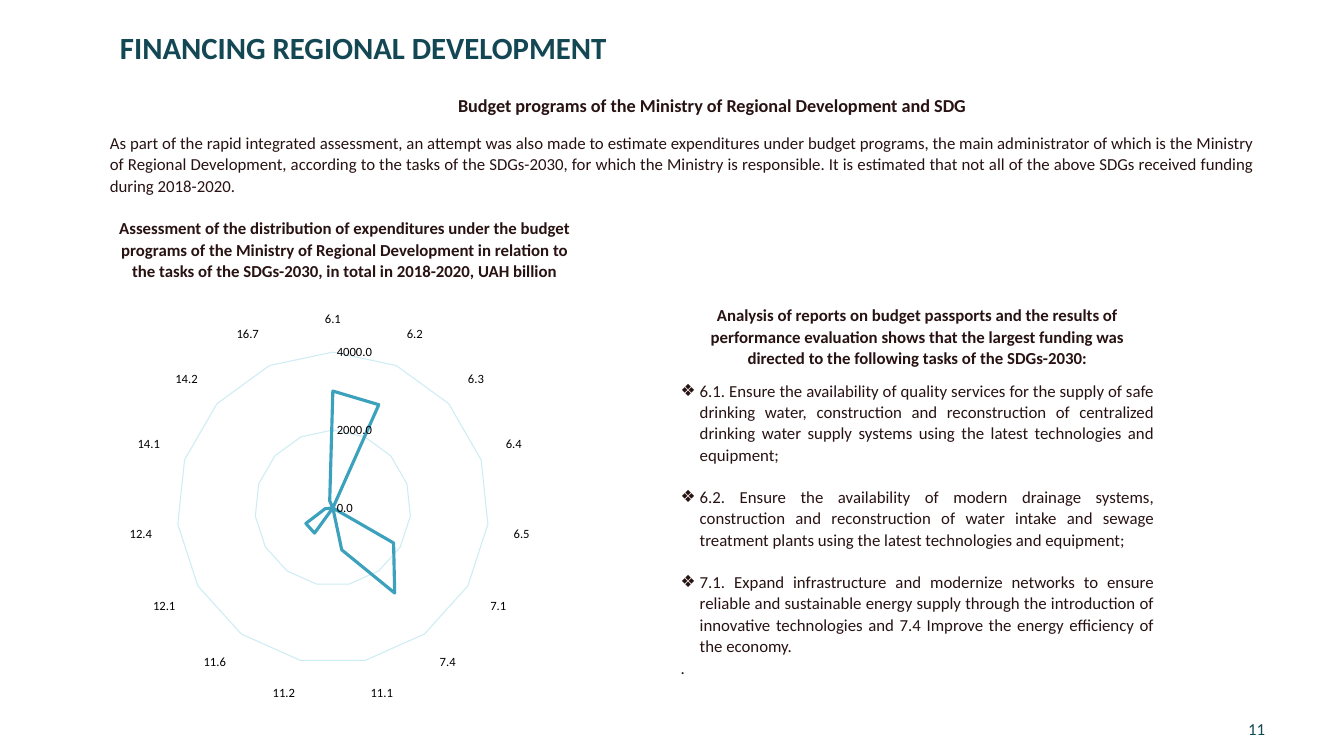
from dataclasses import dataclass

import lxml.etree
import pptx
import pptx.chart.chart
import pptx.chart.data
import pptx.dml.color
import pptx.enum.chart
import pptx.enum.shapes
import pptx.enum.text
import pptx.oxml.ns
import pptx.shapes.base
import pptx.slide
import pptx.text.text
import pptx.util

PX = 9144  # EMU per px, 100 px to the inch
FONT = "Calibri"
TEAL = pptx.dml.color.RGBColor(0x13, 0x47, 0x53)
TEXT = pptx.dml.color.RGBColor(0x28, 0x12, 0x12)
BLACK = pptx.dml.color.RGBColor(0, 0, 0)
WHITE = pptx.dml.color.RGBColor(0xFF, 0xFF, 0xFF)
SERIES = pptx.dml.color.RGBColor(0x3C, 0xA1, 0xBC)
GRID = pptx.dml.color.RGBColor(0xCD, 0xEC, 0xF4)
ALIGN = pptx.enum.text.PP_ALIGN
ANCHOR = pptx.enum.text.MSO_ANCHOR
TICK = pptx.enum.chart.XL_TICK_MARK
BULLET_INDENT = 19


@dataclass(frozen=True)
class Box:
    left: int
    top: int
    width: int
    height: int

    def emu(self) -> tuple[int, int, int, int]:
        return self.left * PX, self.top * PX, self.width * PX, self.height * PX


@dataclass(frozen=True)
class Line:
    text: str
    size: int = 12
    bold: bool = False
    color: pptx.dml.color.RGBColor = TEXT
    align: ALIGN = ALIGN.JUSTIFY
    spacing: float = 1.07
    after: int = 0
    bullet: str = ""


@dataclass(frozen=True)
class TextBlock:
    box: Box
    lines: list[Line]
    inset: int = 0
    anchor: ANCHOR = ANCHOR.TOP


TITLE = TextBlock(
    Box(109, 28, 1133, 56),
    [Line("FINANCING REGIONAL DEVELOPMENT", 22, True, TEAL, ALIGN.LEFT, 0.9)],
    inset=10,
)

PAGE_NUMBER = TextBlock(
    Box(1228, 703, 100, 40),
    [Line("11", color=TEAL, align=ALIGN.LEFT, spacing=1.0)],
    inset=10, anchor=ANCHOR.MIDDLE,
)

PANELS = [
    TextBlock(Box(109, 130, 1136, 64), [Line(
        "As part of the rapid integrated assessment, an attempt was also made to estimate "
        "expenditures under budget programs, the main administrator of which is the Ministry of "
        "Regional Development, according to the tasks of the SDGs-2030, for which the Ministry is "
        "responsible. It is estimated that not all of the above SDGs received funding during "
        "2018-2020.")]),
    TextBlock(Box(439, 92, 534, 22), [Line(
        "Budget programs of the Ministry of Regional Development and SDG",
        13, True, align=ALIGN.CENTER)]),
    TextBlock(Box(109, 215, 466, 64), [Line(
        "Assessment of the distribution of expenditures under the budget programs of the Ministry "
        "of Regional Development in relation to the tasks of the SDGs-2030, in total in 2018-2020, "
        "UAH billion", bold=True, align=ALIGN.CENTER)]),
]

ANALYSIS = TextBlock(Box(675, 301, 470, 375), [
    Line("Analysis of reports on budget passports and the results of performance evaluation shows "
         "that the largest funding was directed to the following tasks of the SDGs-2030:",
         bold=True, align=ALIGN.CENTER, after=8),
    Line("6.1. Ensure the availability of quality services for the supply of safe drinking water, "
         "construction and reconstruction of centralized drinking water supply systems using the "
         "latest technologies and equipment;", spacing=1.06, after=15, bullet="❖"),
    Line("6.2. Ensure the availability of modern drainage systems, construction and reconstruction "
         "of water intake and sewage treatment plants using the latest technologies and equipment;",
         spacing=1.06, after=15, bullet="❖"),
    Line("7.1. Expand infrastructure and modernize networks to ensure reliable and sustainable "
         "energy supply through the introduction of innovative technologies and 7.4 Improve the "
         "energy efficiency of the economy.", spacing=1.06, bullet="❖"),
    Line(".", spacing=1.06),
])

CHART_BOX = Box(19, 301, 616, 402)
EXPENDITURES = {
    "6.1": 3000, "6.2": 2900, "6.3": 0, "6.4": 0, "6.5": 0,
    "7.1": 1800, "7.4": 2700, "11.1": 1100, "11.2": 0, "11.6": 800,
    "12.1": 800, "12.4": 200, "14.1": 0, "14.2": 0, "16.7": 200,
}


def set_font(font: pptx.text.text.Font, size: int, color: pptx.dml.color.RGBColor,
             bold: bool = False) -> None:
    font.name = FONT
    font.size = pptx.util.Pt(size)
    font.bold = bold
    font.color.rgb = color


def set_bullet(paragraph: pptx.text.text._Paragraph, bullet: str) -> None:
    properties = paragraph._p.get_or_add_pPr()
    indent = BULLET_INDENT * PX if bullet else 0
    properties.set("marL", str(indent))
    properties.set("indent", str(-indent))
    tag = pptx.oxml.ns.qn("a:buChar" if bullet else "a:buNone")
    element = lxml.etree.SubElement(properties, tag)
    if bullet:
        element.set("char", bullet)


def fill_text(shape: pptx.shapes.base.BaseShape, block: TextBlock) -> None:
    shape.left, shape.top, shape.width, shape.height = block.box.emu()
    frame = shape.text_frame
    frame.word_wrap = True
    frame.auto_size = pptx.enum.text.MSO_AUTO_SIZE.NONE
    frame.vertical_anchor = block.anchor
    frame.margin_left = frame.margin_right = block.inset * PX
    frame.margin_top = frame.margin_bottom = block.inset * PX // 2
    for index, line in enumerate(block.lines):
        paragraph = frame.add_paragraph() if index else frame.paragraphs[0]
        paragraph.text = line.text
        set_bullet(paragraph, line.bullet)
        paragraph.alignment = line.align
        paragraph.line_spacing = line.spacing
        paragraph.space_before = pptx.util.Pt(0)
        paragraph.space_after = pptx.util.Pt(line.after)
        set_font(paragraph.font, line.size, line.color, line.bold)


def paint_white(shape: pptx.shapes.base.BaseShape) -> None:
    shape.fill.solid()
    shape.fill.fore_color.rgb = WHITE
    shape.line.fill.background()


def add_panel(slide: pptx.slide.Slide, block: TextBlock) -> None:
    shape = slide.shapes.add_shape(
        pptx.enum.shapes.MSO_SHAPE.RECTANGLE, *block.box.emu())
    shape.shadow.inherit = False
    paint_white(shape)
    fill_text(shape, block)


def add_radar(slide: pptx.slide.Slide) -> None:
    data = pptx.chart.data.CategoryChartData(number_format="0.0")
    data.categories = list(EXPENDITURES)
    data.add_series("Series 1", list(EXPENDITURES.values()))
    chart: pptx.chart.chart.Chart = slide.shapes.add_chart(
        pptx.enum.chart.XL_CHART_TYPE.RADAR, *CHART_BOX.emu(), data).chart
    chart.has_legend = False
    chart.has_title = False
    set_font(chart.font, 10, BLACK)

    # Axes and grid
    category_axis, value_axis = chart.category_axis, chart.value_axis
    for axis in (category_axis, value_axis):
        axis.major_tick_mark = axis.minor_tick_mark = TICK.NONE
        set_font(axis.tick_labels.font, 9, BLACK)
    category_axis.has_major_gridlines = False
    value_axis.minimum_scale, value_axis.maximum_scale = 0, 4000
    value_axis.major_unit = 2000
    value_axis.tick_labels.number_format = "0.0"
    value_axis.tick_labels.number_format_is_linked = False
    value_axis.format.line.fill.background()
    for line in (category_axis.format.line, value_axis.major_gridlines.format.line):
        line.color.rgb = GRID
        line.width = pptx.util.Pt(0.75)

    # Expenditure outline
    plot = chart.plots[0]
    plot.vary_by_categories = False
    series = plot.series[0]
    series.marker.style = pptx.enum.chart.XL_MARKER_STYLE.NONE
    series.format.line.color.rgb = SERIES
    series.format.line.width = pptx.util.Pt(2.25)


def main() -> None:
    presentation = pptx.Presentation()
    presentation.slide_width, presentation.slide_height = 1333 * PX, 750 * PX
    slide = presentation.slides.add_slide(presentation.slide_layouts[1])
    # Title and task list
    fill_text(slide.shapes.title, TITLE)
    task_list = slide.placeholders[1]
    paint_white(task_list)
    fill_text(task_list, ANALYSIS)
    # Headings, introduction, page number and chart
    for panel in PANELS:
        add_panel(slide, panel)
    fill_text(slide.shapes.add_textbox(*PAGE_NUMBER.box.emu()), PAGE_NUMBER)
    add_radar(slide)
    presentation.save("out.pptx")


if __name__ == "__main__":
    main()
